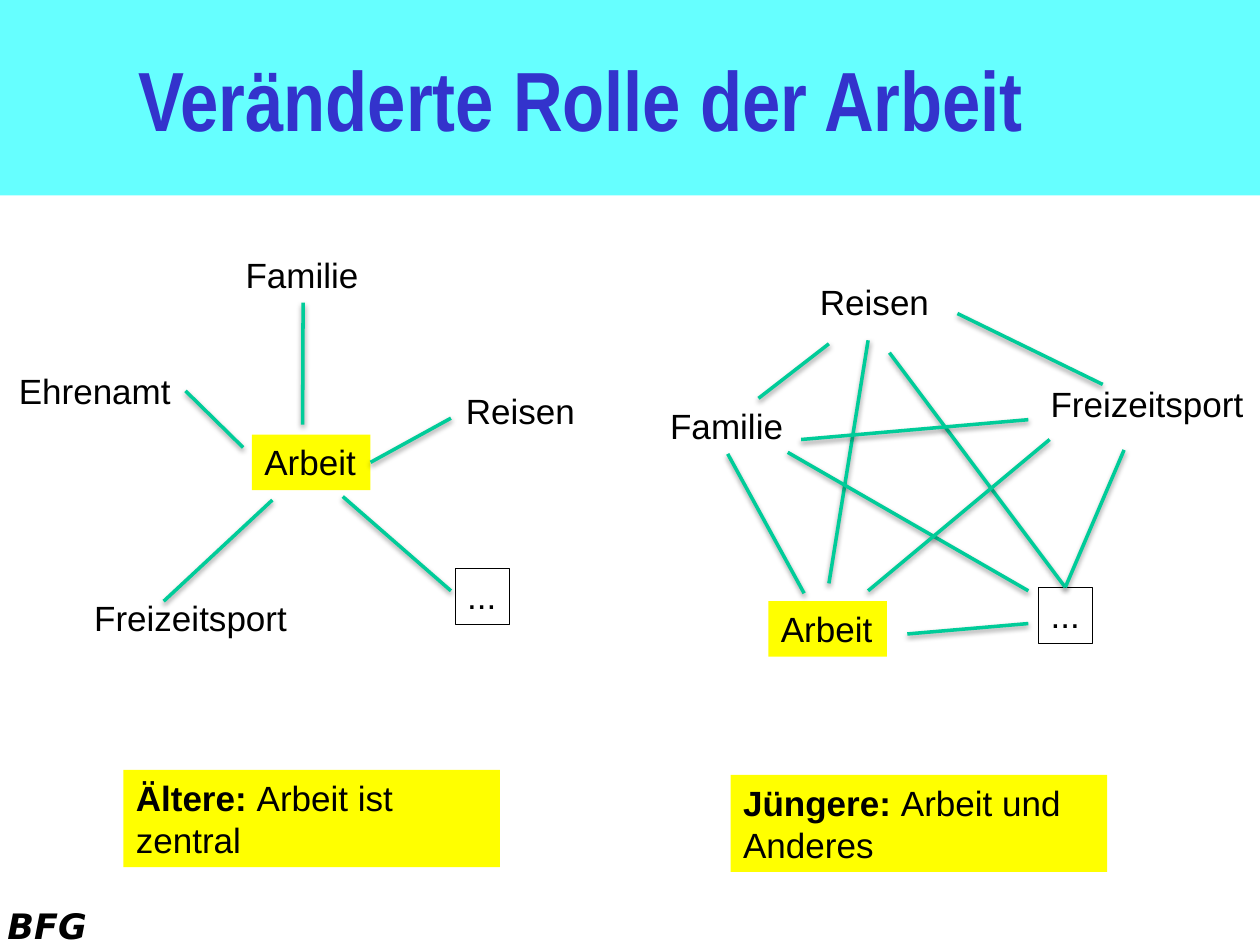
from dataclasses import dataclass

from lxml import etree
from pptx import Presentation
from pptx import util as u
from pptx.dml.color import RGBColor
from pptx.enum import shapes, text
from pptx.oxml import ns


@dataclass(frozen=True)
class Theme:
    banner: RGBColor = RGBColor.from_string("66FFFF")
    title: RGBColor = RGBColor.from_string("3333CC")
    ink: RGBColor = RGBColor.from_string("000000")
    highlight: RGBColor = RGBColor.from_string("FFFF00")
    link: RGBColor = RGBColor.from_string("00CC99")
    title_size: u.Pt = u.Pt(48)
    body_size: u.Pt = u.Pt(20)
    link_width: u.Pt = u.Pt(2)
    border_width: u.Pt = u.Pt(0.25)


theme = Theme()
BODY = {"name": "Arial", "size": theme.body_size, "bold": False}
STRONG = BODY | {"bold": True}
TITLE = {"name": "Arial Narrow", "size": theme.title_size, "bold": True}
FOOTER = {"name": "DejaVu Sans", "size": theme.body_size, "bold": True, "italic": True}


def add_span(para, words, font_format, color=theme.ink):
    span = para.add_run()
    span.text = words
    for name, value in font_format.items():
        setattr(span.font, name, value)
    span.font.color.rgb = color


def add_box(at, spans, look="plain", wrap=False):
    """Add a text box; look is plain, filled or framed, spans are (words, format) pairs."""
    box = page.shapes.add_textbox(*(u.Cm(length) for length in at))
    box.text_frame.word_wrap = wrap
    box.text_frame.auto_size = text.MSO_AUTO_SIZE.SHAPE_TO_FIT_TEXT
    if look == "filled":
        box.fill.solid()
        box.fill.fore_color.rgb = theme.highlight
    elif look == "framed":
        box.line.color.rgb = theme.ink
        box.line.width = theme.border_width
    for words, font_format in spans:
        add_span(box.text_frame.paragraphs[0], words, font_format)
    return box


deck = Presentation()
deck.slide_width, deck.slide_height = u.Cm(25.4), u.Cm(19.05)
page = deck.slides.add_slide(deck.slide_layouts[5])

# Title banner
title = page.shapes.title
banner = {"left": 0, "top": 0, "width": deck.slide_width, "height": u.Cm(3.94)}
for name, value in banner.items():
    setattr(title, name, value)
title.fill.solid()
title.fill.fore_color.rgb = theme.banner
frame = title.text_frame
frame.auto_size = text.MSO_AUTO_SIZE.NONE
frame.vertical_anchor = text.MSO_ANCHOR.MIDDLE
frame.margin_left = u.Cm(2.79)
frame.paragraphs[0].alignment = text.PP_ALIGN.LEFT
add_span(frame.paragraphs[0], "Veränderte Rolle der Arbeit", TITLE, theme.title)

# Life areas: (width, height, look) per word, then a place in each network
kinds = {
    "Arbeit": (2.39, 1.12, "filled"),
    "Familie": (2.82, 1.12, "plain"),
    "Freizeitsport": (4.42, 1.96, "plain"),
    "Reisen": (2.74, 1.12, "plain"),
    "Ehrenamt": (3.61, 1.12, "plain"),
    "...": (1.09, 1.12, "framed"),
}
places = {
    "older": {
        "Arbeit": (5.08, 8.76),
        "Familie": (4.7, 4.98),
        "Freizeitsport": (1.65, 11.91),
        "Reisen": (9.14, 7.72),
        "Ehrenamt": (0.13, 7.32),
        "...": (9.17, 11.46),
    },
    "younger": {
        "Arbeit": (15.49, 12.12),
        "Familie": (13.26, 8.03),
        "Freizeitsport": (20.93, 7.59),
        "Reisen": (16.28, 5.54),
        "...": (20.93, 11.84),
    },
}
areas = {}
for group, spots in places.items():
    for word, spot in spots.items():
        width, height, look = kinds[word]
        areas[group, word] = add_box((*spot, width, height), [(word, BODY)], look)

# Captions and footer
captions = [
    (2.49, 15.52, "Ältere: ", "Arbeit ist zentral"),
    (14.73, 15.62, "Jüngere: ", "Arbeit und Anderes"),
]
for left, top, lead, rest in captions:
    add_box((left, top, 7.59, 1.96), [(lead, STRONG), (rest, BODY)], "filled", wrap=True)
add_box((-0.1, 18.11, 4.09, 1.09), [("BFG", FOOTER)], wrap=True)

# Links: start, end, and the (area, side) that an end is joined to
more_top = (areas["younger", "..."], 0)
links = [
    ((6.1, 6.1), (6.1, 8.56), (areas["older", "Familie"], 2), None),
    ((6.91, 10.01), (9.09, 11.91), None, None),
    ((5.49, 10.08), (3.3, 12.12), None, None),
    ((4.9, 9.02), (3.73, 7.87), None, (areas["older", "Ehrenamt"], 3)),
    ((9.09, 8.43), (7.47, 9.32), None, (areas["older", "Arbeit"], 3)),
    ((16.71, 6.93), (15.29, 8.03), None, None),
    ((17.5, 6.86), (16.71, 11.76), None, None),
    ((17.93, 7.11), (21.48, 11.84), None, more_top),
    ((22.23, 7.75), (19.3, 6.32), None, None),
    ((22.66, 9.07), (21.48, 11.84), None, more_top),
    ((20.73, 11.91), (15.88, 9.12), None, None),
    ((20.73, 8.46), (16.15, 8.86), None, None),
    ((14.66, 9.14), (16.21, 11.96), (areas["younger", "Familie"], 2), None),
    ((21.16, 8.86), (17.5, 11.91), None, None),
    ((20.73, 12.57), (18.29, 12.78), None, None),
]
shadow_format = {"blurRad": u.Pt(3.1), "dist": u.Pt(1.6), "dir": 90 * 60000, "rotWithShape": 0}
for start, end, start_joint, end_joint in links:
    link = page.shapes.add_connector(
        shapes.MSO_CONNECTOR.STRAIGHT, *(u.Cm(length) for length in start + end)
    )
    if start_joint:
        link.begin_connect(*start_joint)
    if end_joint:
        link.end_connect(*end_joint)
    link.line.color.rgb = theme.link
    link.line.width = theme.link_width
    effects = etree.SubElement(link._element.spPr, ns.qn("a:effectLst"))
    shadow = etree.SubElement(effects, ns.qn("a:outerShdw"))
    for name, value in shadow_format.items():
        shadow.set(name, str(int(value)))
    shade = etree.SubElement(shadow, ns.qn("a:srgbClr"), val=str(theme.ink))
    etree.SubElement(shade, ns.qn("a:alpha"), val="38000")

deck.save("out.pptx")
